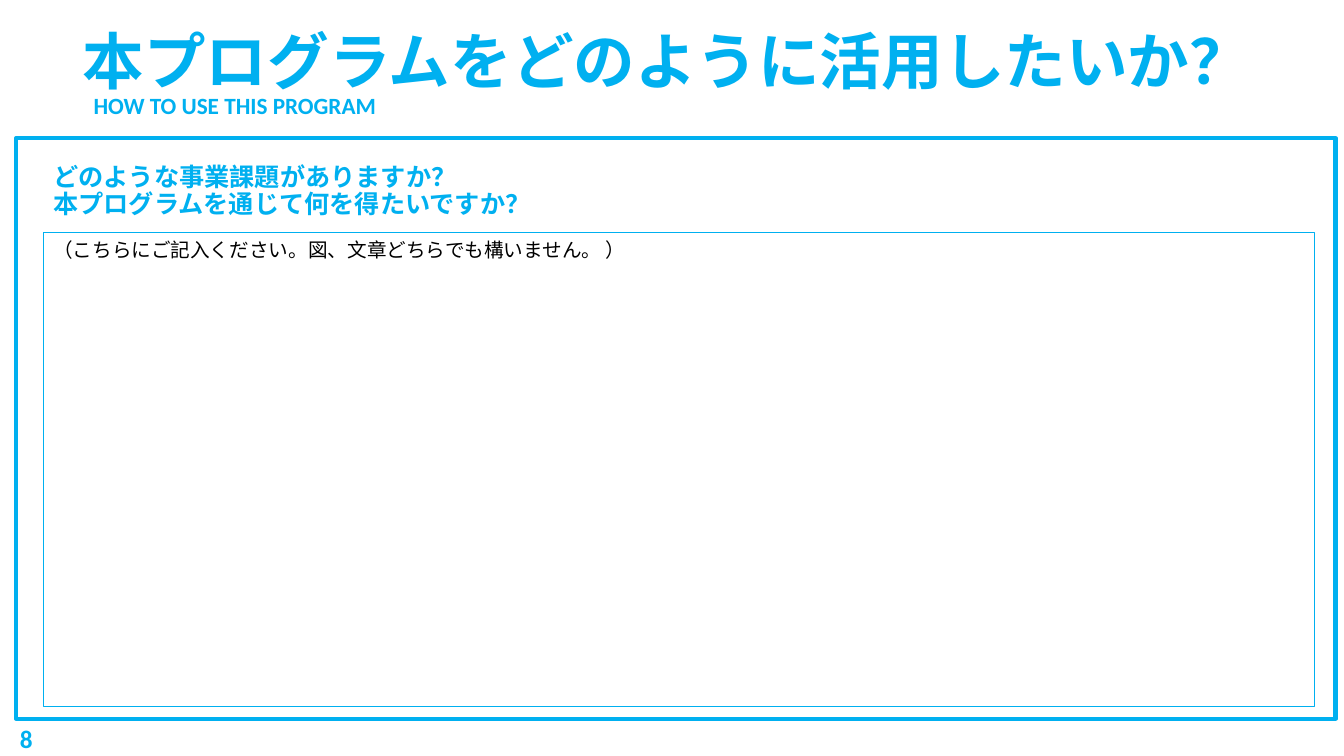
"""Build the program-use worksheet slide."""
from dataclasses import dataclass

from pptx import Presentation
from pptx.dml.color import RGBColor
from pptx.enum import shapes, text
from pptx.util import Pt


@dataclass(frozen=True)
class Theme:
    font: str = "Calibri"
    accent: RGBColor = RGBColor(0x00, 0xB0, 0xF0)
    ink: RGBColor = RGBColor(0, 0, 0)
    paper: RGBColor = RGBColor(0xFF, 0xFF, 0xFF)
    title: float = 44
    heading: float = 18
    subtitle: float = 16.6
    body: float = 14


THEME = Theme()


def write(sp, words, size, color=THEME.accent, bold=True, spacing=1.0,
          anchor=text.MSO_ANCHOR.MIDDLE):
    tf = sp.text_frame
    tf.text = words
    tf.word_wrap = True
    tf.auto_size = text.MSO_AUTO_SIZE.NONE
    tf.vertical_anchor = anchor
    for p in tf.paragraphs:
        p.alignment = text.PP_ALIGN.LEFT
        p.line_spacing = spacing
        for r in p.runs:
            r.font.name = THEME.font
            r.font.size = Pt(size)
            r.font.bold = bold
            r.font.color.rgb = color


def add_title(s, box, words):
    sp = s.shapes.title
    sp.left, sp.top, sp.width, sp.height = map(Pt, box)
    write(sp, words, THEME.title, spacing=0.9)


def add_label(s, box, words, size, spacing=1.0):
    sp = s.shapes.add_textbox(*map(Pt, box))
    write(sp, words, size, spacing=spacing)


def add_frame(s, box, weight):
    sp = s.shapes.add_shape(shapes.MSO_SHAPE.RECTANGLE, *map(Pt, box))
    sp.shadow.inherit = False
    sp.fill.solid()
    sp.fill.fore_color.rgb = THEME.paper
    sp.line.color.rgb = THEME.accent
    sp.line.width = Pt(weight)
    return sp


def main():
    prs = Presentation()
    prs.slide_width, prs.slide_height = Pt(960), Pt(540)
    s = prs.slides.add_slide(prs.slide_layouts[5])

    add_title(s, (51.84, -5.76, 869.76, 104.4), "本プログラムをどのように活用したいか？")
    add_label(s, (59.76, 64.08, 240.48, 25.2), "HOW TO USE THIS PROGRAM",
              THEME.subtitle, 0.8)
    add_frame(s, (11.52, 98.64, 942.48, 414.72), 3)
    add_label(s, (30.96, 106.56, 737.28, 60.48),
              "どのような事業課題がありますか？\n本プログラムを通じて何を得たいですか？",
              THEME.heading, 0.9)
    answer = add_frame(s, (30.96, 166.32, 907.92, 338.4), 1)
    write(answer, "（こちらにご記入ください。図、文章どちらでも構いません。 ）", THEME.body,
          THEME.ink, bold=False, anchor=text.MSO_ANCHOR.TOP)
    add_label(s, (7.2, 513.36, 216, 28.8), "8", THEME.heading)

    prs.save("out.pptx")


if __name__ == "__main__":
    main()
